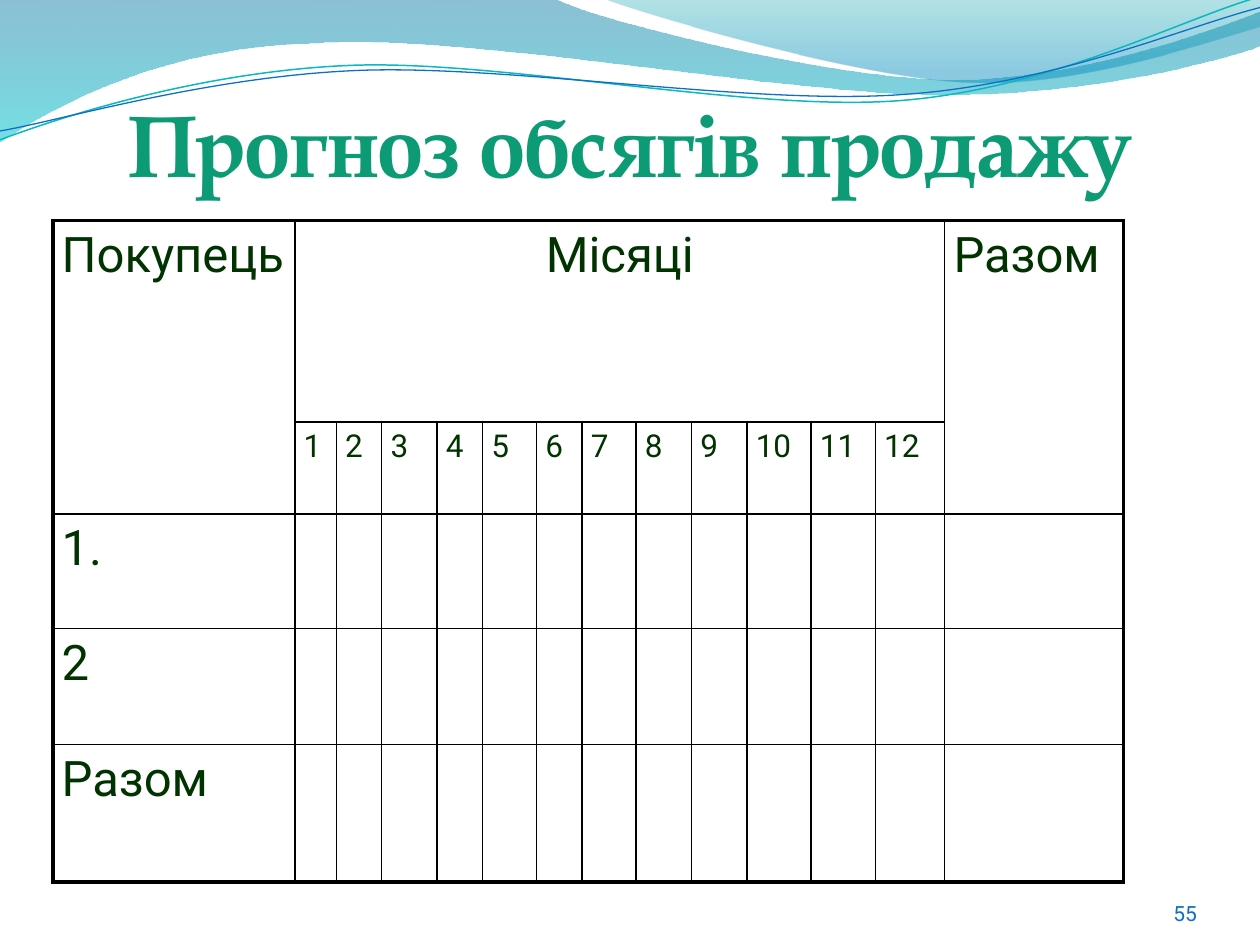
from pptx import Presentation, util as u
from pptx.dml.color import RGBColor
from pptx.enum import text
from pptx.oxml import parse_xml
from pptx.oxml.ns import nsdecls, qn
from lxml import etree

# Content
TITLE = "Прогноз обсягів продажу"
PAGE = "55"
MONTHS = [str(m) for m in range(1, 13)]
ROWS = [
    ["Покупець", "Місяці"] + [""] * 11 + ["Разом"],
    [""] + MONTHS + [""],
    ["1."], ["2"], ["Разом"],
]
COLS = [1.92, 0.33, 0.36, 0.44, 0.36, 0.43, 0.36, 0.43, 0.44, 0.44, 0.51, 0.51, 0.55, 1.42]
HEIGHTS = [1.6, 0.73, 0.91, 0.92, 1.09]
MERGES = [((0, 0), (1, 0)), ((0, 1), (0, 12)), ((0, 13), (1, 13))]
INK = "003300"

# Wave outlines: two numbers are a straight step, six a Bezier curve
BANDS = [
    ([(0, 0), (4.4, -0.01), (4.76, 0.17, 6.64, 0.63, 7.58, 0.63),
      (8.53, 0.63, 9.58, 0.26, 10, 0.09), (10.01, 0.36),
      (9.83, 0.44, 8.7, 0.76, 7.46, 0.75), (6.22, 0.75, 3.82, 0.28, 2.57, 0.34),
      (1.29, 0.36, 0.46, 0.83, -0.01, 1.13), (0, 0)],
     [(0, "0074A1", 45), (1, "00C6CF", 55)]),
    ([(4.79, -0.01), (5.09, 0.11, 6.82, 0.62, 7.69, 0.65),
      (8.56, 0.69, 9.61, 0.32, 10, 0.21), (10, 0), (4.79, -0.01)],
     [(0, "00A1A9", 30), (0.8, "008BBF", 45)]),
]
STROKES = [
    ([(0, 1.11), (0.48, 0.93, 1.58, 0.57, 2.77, 0.52),
      (3.95, 0.47, 5.93, 0.89, 7.13, 0.8), (8.33, 0.71, 9.38, 0.15, 9.98, -0.02)],
     "0AB8BF", 0.85),
    ([(0, 1.04), (0.47, 0.96, 1.64, 0.61, 2.83, 0.56),
      (4.03, 0.51, 5.97, 0.84, 7.17, 0.75), (8.36, 0.67, 9.41, 0.21, 10, 0.06)],
     "0F6FC6", 0.75),
]


def rgb(value):
    return RGBColor.from_string(value)


def add_wave(slide, steps, close):
    """Build the outline from all points, then join each three of a curve step."""
    points = [(u.Inches(s[k]), u.Inches(s[k + 1])) for s in steps for k in range(0, len(s), 2)]
    builder = slide.shapes.build_freeform(*points[0])
    builder.add_line_segments(points[1:], close=close)
    sp = builder.convert_to_shape()
    sp.shadow.inherit = False
    lines = iter(list(sp._element.spPr.iter(qn("a:lnTo"))))
    for step in steps[1:]:
        line = next(lines)
        if len(step) == 6:
            curve = etree.Element(qn("a:cubicBezTo"))
            line.addprevious(curve)
            for part in (line, next(lines), next(lines)):
                curve.append(part[0])
                part.getparent().remove(part)
    return sp


def add_run(p, words, size, font, color, bold=False):
    r = p.add_run()
    r.text = words
    r.font.size, r.font.name, r.font.bold = u.Pt(size), font, bold
    r.font.color.rgb = rgb(color)


def add_text(slide, box, align, top_inset, *run):
    sp = slide.shapes.add_textbox(*map(u.Inches, box))
    tf = sp.text_frame
    tf.word_wrap = True
    tf.vertical_anchor = text.MSO_ANCHOR.BOTTOM
    tf.margin_left = tf.margin_right = tf.margin_bottom = 0
    tf.margin_top = u.Inches(top_inset)
    p = tf.paragraphs[0]
    p.alignment = align
    add_run(p, *run)


def set_borders(cell, widths):
    tc_pr = cell._tc.get_or_add_tcPr()
    for i, (side, width) in enumerate(widths.items()):
        tc_pr.insert(i, parse_xml(
            f'<a:ln{side} {nsdecls("a")} w="{u.Pt(width)}"><a:solidFill>'
            f'<a:srgbClr val="000000"/></a:solidFill></a:ln{side}>'))


def add_forecast(slide):
    rows, cols = len(HEIGHTS), len(COLS)
    table = slide.shapes.add_table(rows, cols, u.Inches(0.42), u.Inches(1.75),
                                   u.Inches(sum(COLS)), u.Inches(sum(HEIGHTS))).table
    table.first_row = table.horz_banding = False
    for column, width in zip(table.columns, COLS):
        column.width = u.Inches(width)
    for row, height in zip(table.rows, HEIGHTS):
        row.height = u.Inches(height)
    for first, last in MERGES:
        table.cell(*first).merge(table.cell(*last))
    for i in range(rows):
        for j in range(cols):
            cell = table.cell(i, j)
            cell.fill.background()
            cell.margin_left = cell.margin_right = u.Inches(0.07)
            outer = {"L": j == 0, "R": j == cols - 1, "T": i == 0, "B": i == rows - 1}
            set_borders(cell, {side: 2.25 if edge else 1 for side, edge in outer.items()})
            words = ROWS[i][j] if j < len(ROWS[i]) else ""
            if words:
                p = cell.text_frame.paragraphs[0]
                if (i, j) == (0, 1):
                    p.alignment = text.PP_ALIGN.CENTER
                add_run(p, words, 18 if i == 1 else 28, "Roboto", INK)


def main():
    prs = Presentation()
    prs.slide_width, prs.slide_height = u.Inches(10), u.Inches(7.5)
    slide = prs.slides.add_slide(prs.slide_layouts[6])

    # Wave decoration
    for steps, stops in BANDS:
        sp = add_wave(slide, steps, True)
        sp.line.fill.background()
        sp.fill.gradient()
        sp.fill.gradient_angle = 270
        for stop, (position, color, _) in zip(sp.fill.gradient_stops, stops):
            stop.position = position
            stop.color.rgb = rgb(color)
        for clr, (_, _, opacity) in zip(sp._element.spPr.iter(qn("a:srgbClr")), stops):
            etree.SubElement(clr, qn("a:alpha")).set("val", str(opacity * 1000))
    for steps, color, width in STROKES:
        sp = add_wave(slide, steps, False)
        sp.fill.background()
        sp.line.color.rgb = rgb(color)
        sp.line.width = u.Pt(width)

    # Title, table and page number
    add_text(slide, (0.5, 0.3, 9, 1.25), text.PP_ALIGN.CENTER, 0.05,
             TITLE, 50, "TeX Gyre Pagella", "0C9B74", True)
    add_forecast(slide)
    add_text(slide, (8.67, 6.95, 0.83, 0.4), text.PP_ALIGN.RIGHT, 0,
             PAGE, 12, "Roboto", "0F6FC6")
    prs.save("out.pptx")


if __name__ == "__main__":
    main()
